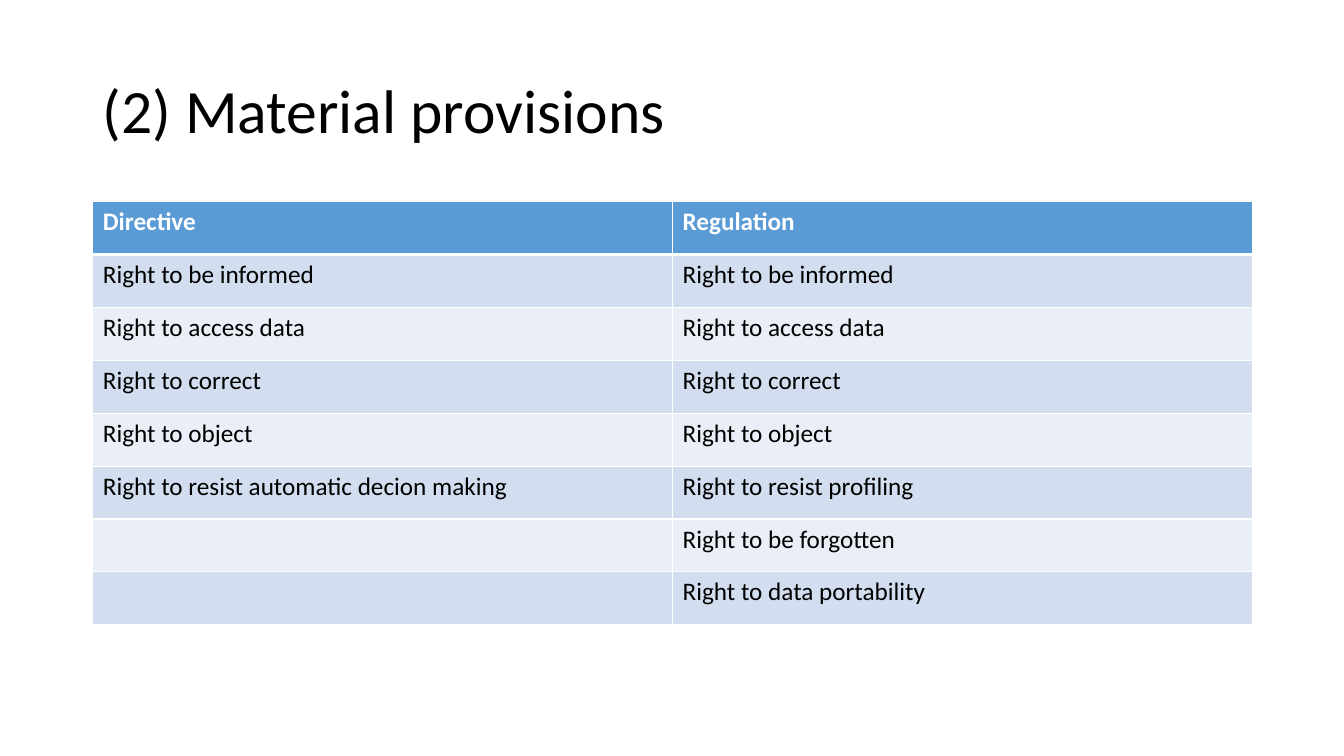
import lxml.etree
import pptx
import pptx.dml.color
import pptx.enum.text
import pptx.oxml.ns
import pptx.util

Inches, Pt = pptx.util.Inches, pptx.util.Pt

TITLE = "(2) Material provisions"
ROWS = [
    ("Directive", "Regulation"),
    ("Right to be informed", "Right to be informed"),
    ("Right to access data", "Right to access data"),
    ("Right to correct", "Right to correct"),
    ("Right to object", "Right to object"),
    ("Right to resist automatic decion making", "Right to resist profiling"),
    ("", "Right to be forgotten"),
    ("", "Right to data portability"),
]
COLORS = {
    "text": "000000",
    "white": "FFFFFF",
    "header": "5B9BD5",
    "odd": "D2DEEF",
    "even": "EAEFF7",
}
FONT = "Calibri"
LEFT, WIDTH = 0.92, 11.5
TITLE_TOP, TITLE_HEIGHT = 0.4, 1.45
TABLE_TOP, TABLE_HEIGHT = 2, 4.2
THIN, THICK = 1, 3


def rgb(name):
    return pptx.dml.color.RGBColor.from_string(COLORS[name])


def add_span(para, text, size, color, bold=False):
    span = para.add_run()
    span.text = text
    span.font.name = FONT
    span.font.size = Pt(size)
    span.font.bold = bold
    span.font.color.rgb = rgb(color)


def add_borders(cell, top, bottom):
    """Draw white cell borders; call before filling, as the schema wants lines first."""
    properties = cell._tc.get_or_add_tcPr()
    qn = pptx.oxml.ns.qn
    for side, points in (("L", THIN), ("R", THIN), ("T", top), ("B", bottom)):
        line = lxml.etree.SubElement(properties, qn(f"a:ln{side}"), w=str(Pt(points)))
        fill = lxml.etree.SubElement(line, qn("a:solidFill"))
        lxml.etree.SubElement(fill, qn("a:srgbClr"), val=COLORS["white"])


def add_title(slide):
    box = slide.shapes.add_textbox(
        Inches(LEFT), Inches(TITLE_TOP), Inches(WIDTH), Inches(TITLE_HEIGHT))
    frame = box.text_frame
    frame.word_wrap = True
    frame.vertical_anchor = pptx.enum.text.MSO_ANCHOR.MIDDLE
    para = frame.paragraphs[0]
    para.line_spacing = 0.9
    add_span(para, TITLE, 44, "text")


def add_rights_table(slide):
    table = slide.shapes.add_table(
        len(ROWS), len(ROWS[0]), Inches(LEFT), Inches(TABLE_TOP),
        Inches(WIDTH), Inches(TABLE_HEIGHT)).table
    for r, row in enumerate(ROWS):
        is_header = r == 0
        band = "header" if is_header else ("even", "odd")[r % 2]
        for c, text in enumerate(row):
            cell = table.cell(r, c)
            add_borders(cell, THICK if r == 1 else THIN, THICK if is_header else THIN)
            cell.fill.solid()
            cell.fill.fore_color.rgb = rgb(band)
            if text:
                add_span(cell.text_frame.paragraphs[0], text, 18,
                         "white" if is_header else "text", is_header)


def main():
    deck = pptx.Presentation()
    deck.slide_width, deck.slide_height = Inches(13.33), Inches(7.5)
    slide = deck.slides.add_slide(deck.slide_layouts[6])
    add_title(slide)
    add_rights_table(slide)
    deck.save("out.pptx")


if __name__ == "__main__":
    main()
